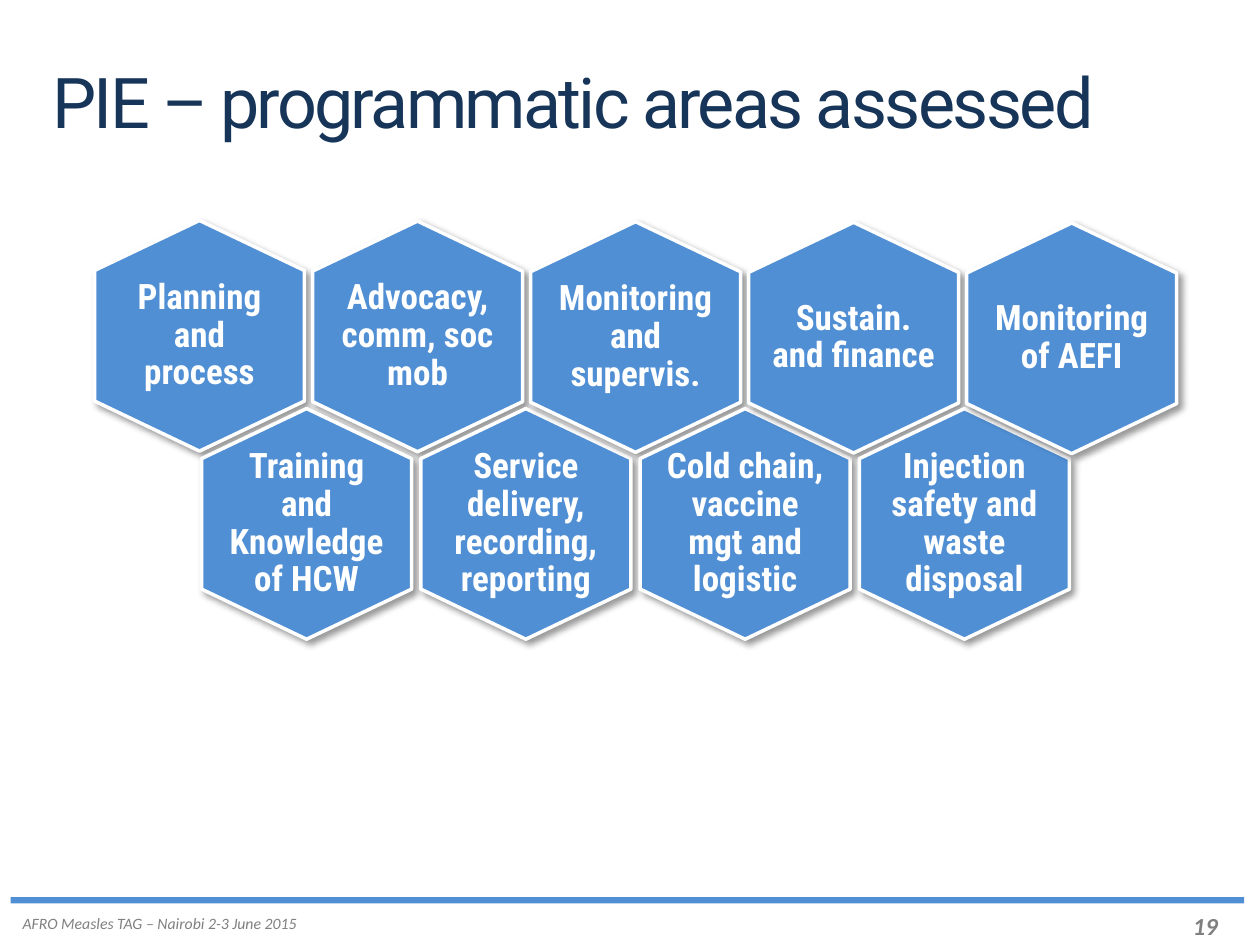
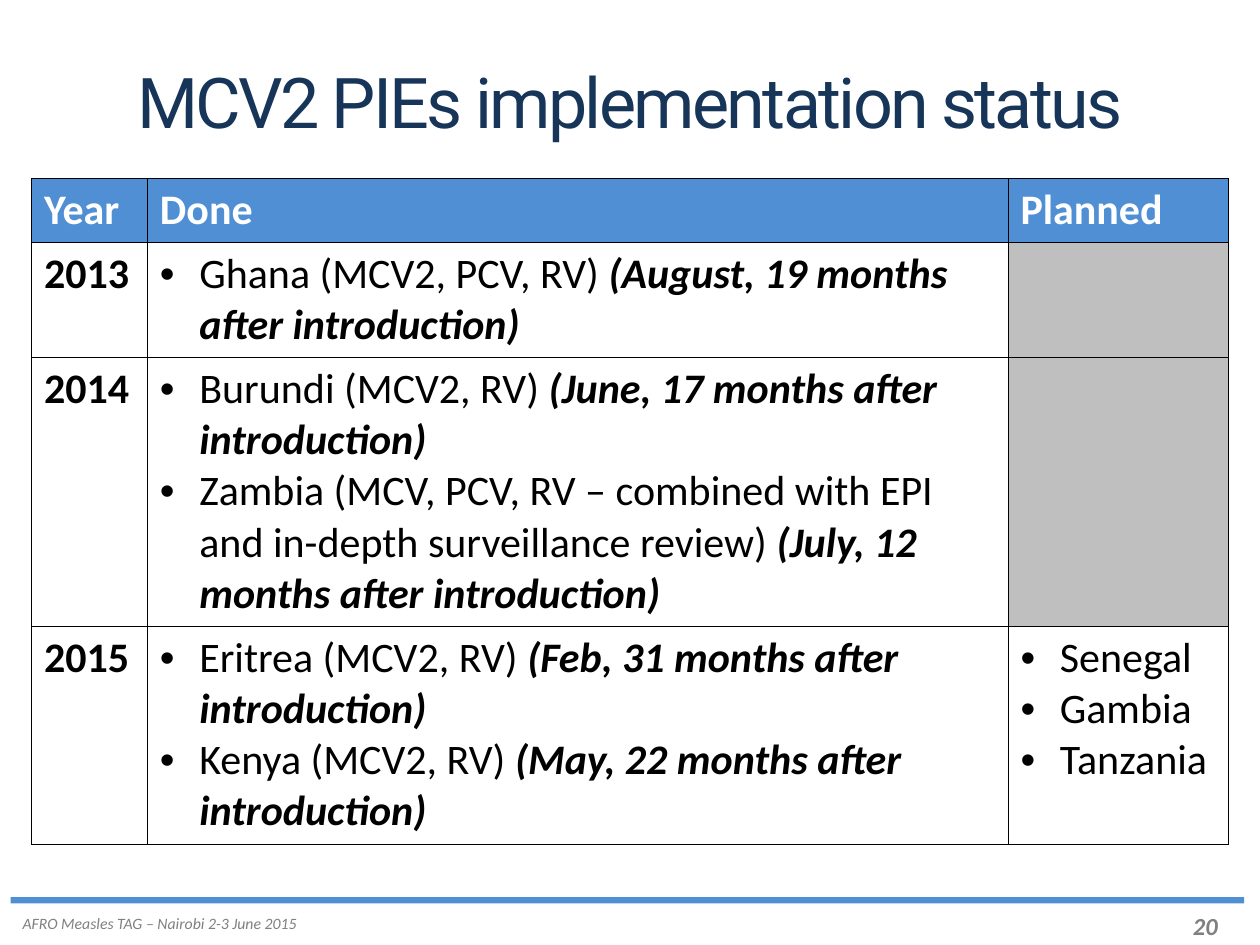
from pptx import Presentation
from pptx.util import Pt
from pptx.dml.color import RGBColor
from pptx.enum.shapes import MSO_SHAPE as Shape
from pptx.enum.text import PP_ALIGN as Align, MSO_ANCHOR as Anchor
from pptx.oxml import parse_xml
from pptx.oxml.ns import nsdecls

# Content
FOOTER = "AFRO Measles TAG – Nairobi 2-3 June 2015"
AREAS_TITLE = "PIE – programmatic areas assessed"
AREAS = [  # (row of the honeycomb, label), from back to front
    ("upper", "Planning and process"),
    ("upper", "Advocacy, comm, soc mob"),
    ("lower", "Training and Knowledge of HCW"),
    ("lower", "Service delivery, recording, reporting"),
    ("upper", "Monitoring and supervis."),
    ("lower", "Cold chain, vaccine mgt and logistic"),
    ("upper", "Sustain. and finance"),
    ("lower", "Injection safety and waste disposal"),
    ("upper", "Monitoring of AEFI"),
]
STATUS_TITLE = "MCV2 PIEs implementation status"
STATUS_HEAD = ["Year", "Done", "Planned"]
STATUS = [  # (year, [(country, timing)], [planned countries])
    ("2013", [("Ghana (MCV2, PCV, RV) ", "(August, 19 months after introduction)")], []),
    ("2014", [("Burundi (MCV2, RV) ", "(June, 17 months after introduction)"),
              ("Zambia (MCV, PCV, RV – combined with EPI and in-depth surveillance review) ",
               "(July, 12 months after introduction)")], []),
    ("2015", [("Eritrea (MCV2, RV) ", "(Feb, 31 months after introduction)"),
              ("Kenya (MCV2, RV) ", "(May, 22 months after introduction)")],
     ["Senegal", "Gambia", "Tanzania"]),
]

# Shared look
BLUE, NAVY, WHITE, BLACK = "508FD4", "163558", "FFFFFF", "000000"
GREY, BLANK = "808080", "BFBFBF"
TITLE = dict(name="Roboto", size=Pt(40), color=NAVY)
NOTE = dict(name="Calibri", size=Pt(9), color=GREY, italic=True)
NUMBER = dict(NOTE, size=Pt(14), bold=True)
LABEL = dict(name="Roboto Condensed", size=Pt(20), color=WHITE, bold=True)
BODY = dict(name="Calibri", size=Pt(24), color=BLACK, bold=False)
STRONG = dict(BODY, bold=True)
TIMING = dict(STRONG, italic=True)
HEAD = dict(STRONG, color=WHITE)

# Honeycomb: left, top, step across, step down; then cell size, in points
ROWS = {"upper": (54, 126, 124.6, 0.36), "lower": (115.2, 233.5, 125.3, 0)}
HEX_WIDTH, HEX_HEIGHT, SHOULDER = 120, 131.8, 28.6

COLUMN_WIDTHS = [66.24, 491.76, 126]
ROW_HEIGHTS = [36.4, 65.7, 153.6, 124.5]


def rgb(value):
    return RGBColor.from_string(value)


def paint(target, color):
    target.fill.solid()
    target.fill.fore_color.rgb = rgb(color)


def add_span(para, text, look):
    span = para.add_run()
    span.text = text
    for name, value in look.items():
        if name == "color":
            span.font.color.rgb = rgb(value)
        else:
            setattr(span.font, name, value)
    return span


def set_frame(frame, margins=None, **settings):
    for name, value in settings.items():
        setattr(frame, name, value)
    for side, value in zip(("left", "top", "right", "bottom"), margins or ()):
        setattr(frame, "margin_" + side, Pt(value))


def add_text(page, place, text, look, align=Align.LEFT, **settings):
    box = page.shapes.add_textbox(*map(Pt, place))
    set_frame(box.text_frame, **settings)
    para = box.text_frame.paragraphs[0]
    para.alignment = align
    return para, add_span(para, text, look)


def add_page(deck, number, title, align):
    page = deck.slides.add_slide(deck.slide_layouts[6])
    add_text(page, (674.6, 517, 31.7, 24.5), str(number), NUMBER, word_wrap=False)
    add_text(page, (5.8, 518.4, 172.8, 18), FOOTER, NOTE, word_wrap=False)
    rule = page.shapes.add_shape(Shape.RECTANGLE, *map(Pt, (6, 512.6, 705, 3.6)))
    rule.shadow.inherit = False
    rule.line.fill.background()
    paint(rule, BLUE)
    para, span = add_text(page, (30, 39, 660, 44.6), title, TITLE, align,
                          margins=(0, 0, 0, 0), word_wrap=True)
    para.line_spacing = 0.9
    span.font._element.set("spc", "-150")
    return page


def add_hexagon(page, left, top, label):
    middle, right = left + HEX_WIDTH / 2, left + HEX_WIDTH
    high, low = top + SHOULDER, top + HEX_HEIGHT - SHOULDER
    builder = page.shapes.build_freeform(Pt(middle), Pt(top))
    corners = [(right, high), (right, low), (middle, top + HEX_HEIGHT),
               (left, low), (left, high)]
    builder.add_line_segments([(Pt(x), Pt(y)) for x, y in corners], close=True)
    hexagon = builder.convert_to_shape()
    paint(hexagon, BLUE)
    hexagon.line.color.rgb = rgb(WHITE)
    hexagon.line.width = Pt(2)
    hexagon._element.spPr.append(parse_xml(
        f'<a:effectLst {nsdecls("a")}><a:outerShdw blurRad="{Pt(4)}" dist="{Pt(3)}" '
        f'dir="2700000" algn="tl" rotWithShape="0"><a:srgbClr val="{BLACK}">'
        '<a:alpha val="40000"/></a:srgbClr></a:outerShdw></a:effectLst>'))
    set_frame(hexagon.text_frame, (13, 14.4, 13, 14.4), word_wrap=True,
              vertical_anchor=Anchor.MIDDLE)
    para = hexagon.text_frame.paragraphs[0]
    para.alignment = Align.CENTER
    para.line_spacing = 0.9
    add_span(para, label, LABEL)


def fill_cell(cell, paras, color, bulleted=False):
    paint(cell, color)
    for index, side in enumerate("LRTB"):
        cell._tc.get_or_add_tcPr().insert(index, parse_xml(
            f'<a:ln{side} {nsdecls("a")} w="{Pt(0.25)}"><a:solidFill>'
            f'<a:srgbClr val="{BLACK}"/></a:solidFill></a:ln{side}>'))
    for index, spans in enumerate(paras):
        frame = cell.text_frame
        para = frame.add_paragraph() if index else frame.paragraphs[0]
        if bulleted:
            props = para._p.get_or_add_pPr()
            props.set("marL", str(Pt(22.5)))
            props.set("indent", str(Pt(-22.5)))
            for xml in ('buFont {} typeface="Arial"', 'buChar {} char="•"'):
                props.append(parse_xml(f'<a:{xml.format(nsdecls("a"))}/>'))
        for text, look in spans:
            add_span(para, text, look)


def add_areas(deck):
    page = add_page(deck, 19, AREAS_TITLE, Align.LEFT)
    placed = dict.fromkeys(ROWS, 0)
    for row, label in AREAS:
        left, top, across, down = ROWS[row]
        column = placed[row]
        add_hexagon(page, left + column * across, top + column * down, label)
        placed[row] += 1


def add_status(deck):
    page = add_page(deck, 20, STATUS_TITLE, Align.CENTER)
    place = (18, 102, sum(COLUMN_WIDTHS), sum(ROW_HEIGHTS))
    table = page.shapes.add_table(len(ROW_HEIGHTS), len(COLUMN_WIDTHS),
                                  *map(Pt, place)).table
    table.first_row = table.horz_banding = False
    for column, width in zip(table.columns, COLUMN_WIDTHS):
        column.width = Pt(width)
    for row, height in zip(table.rows, ROW_HEIGHTS):
        row.height = Pt(height)
    for column, text in enumerate(STATUS_HEAD):
        fill_cell(table.cell(0, column), [[(text, HEAD)]], BLUE)
    for row, (year, done, planned) in enumerate(STATUS, 1):
        fill_cell(table.cell(row, 0), [[(year, STRONG)]], WHITE)
        reviews = [[(country, BODY), (timing, TIMING)] for country, timing in done]
        fill_cell(table.cell(row, 1), reviews, WHITE, bulleted=True)
        fill_cell(table.cell(row, 2), [[(country, BODY)] for country in planned],
                  WHITE if planned else BLANK, bulleted=True)


def main():
    deck = Presentation()
    deck.slide_width, deck.slide_height = Pt(720), Pt(540)
    add_areas(deck)
    add_status(deck)
    deck.save("out.pptx")


if __name__ == "__main__":
    main()
